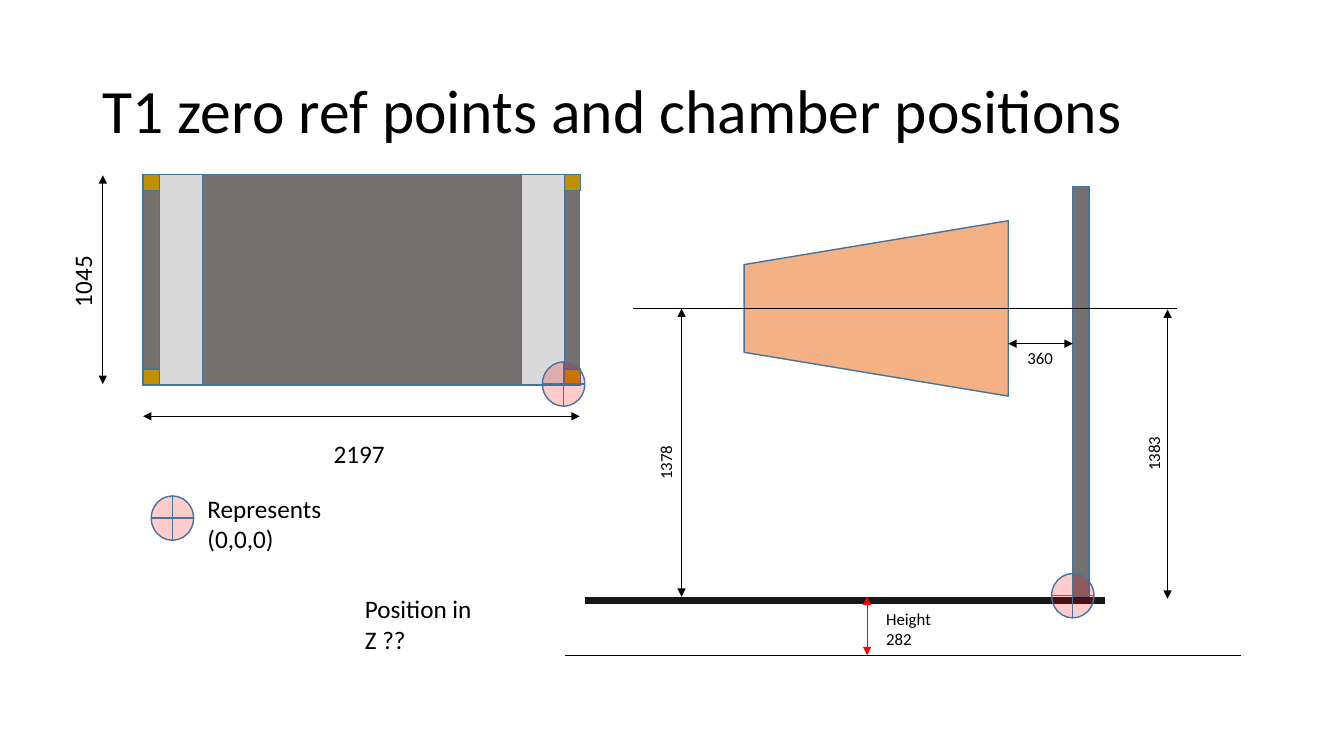
from lxml.etree import SubElement
from pptx import Presentation
from pptx.dml.color import RGBColor
from pptx.enum.shapes import MSO_CONNECTOR, MSO_SHAPE
from pptx.enum.text import MSO_ANCHOR, MSO_AUTO_SIZE, PP_ALIGN
from pptx.oxml.ns import qn
from pptx.util import Inches, Pt

BLACK = RGBColor(0x00, 0x00, 0x00)
COAL = RGBColor(0x18, 0x17, 0x17)
GREY = RGBColor(0x76, 0x71, 0x71)
PALE = RGBColor(0xD9, 0xD9, 0xD9)
GOLD = RGBColor(0xBF, 0x90, 0x00)
PEACH = RGBColor(0xF4, 0xB1, 0x83)
RED = RGBColor(0xFF, 0x00, 0x00)
BLUE = RGBColor(0x43, 0x73, 0x9E)


class Sketch:
    font = "Calibri"
    edge = BLUE

    def __init__(self, slide):
        self.slide = slide
        self.shapes = slide.shapes

    def style(self, frame, size):
        para = frame.paragraphs[0]
        para.alignment = PP_ALIGN.LEFT
        para.font.name = self.font
        para.font.size = Pt(size)
        para.font.color.rgb = BLACK
        return para

    def title(self, text, left, top, width, height):
        head = self.shapes.title
        head.left, head.top = Inches(left), Inches(top)
        head.width, head.height = Inches(width), Inches(height)
        frame = head.text_frame
        frame.text = text
        frame.vertical_anchor = MSO_ANCHOR.MIDDLE
        self.style(frame, 44).line_spacing = 0.9

    def shape(self, left, top, width, height, fill, kind=MSO_SHAPE.RECTANGLE, turn=0):
        item = self.shapes.add_shape(
            kind, Inches(left), Inches(top), Inches(width), Inches(height))
        item.rotation = turn
        item.shadow.inherit = False
        item.fill.solid()
        item.fill.fore_color.rgb = fill
        item.line.color.rgb = self.edge
        item.line.width = Pt(1)
        return item

    def zero(self, left, top):
        """Mark a (0,0,0) point with a see-through crossed circle."""
        mark = self.shape(left, top, 0.42, 0.44, RED, MSO_SHAPE.FLOWCHART_OR)
        color = mark.element.spPr.find(qn("a:solidFill"))[0]
        SubElement(color, qn("a:alpha"), val="20000")

    def line(self, x1, y1, x2, y2, color=BLACK, width=0.5, arrows=False):
        item = self.shapes.add_connector(
            MSO_CONNECTOR.STRAIGHT, Inches(x1), Inches(y1), Inches(x2), Inches(y2))
        item.line.color.rgb = color
        item.line.width = Pt(width)
        props = item.element.spPr
        if arrows:
            for end in ("a:headEnd", "a:tailEnd"):
                SubElement(props.find(qn("a:ln")), qn(end), type="triangle")
        SubElement(props, qn("a:effectLst"))

    def span(self, x1, y1, x2, y2, color=BLACK):
        """Draw a dimension line with an arrowhead at both ends."""
        self.line(x1, y1, x2, y2, color, arrows=True)

    def label(self, text, left, top, width, height, size=12, turn=0):
        box = self.shapes.add_textbox(
            Inches(left), Inches(top), Inches(width), Inches(height))
        box.rotation = turn
        frame = box.text_frame
        frame.word_wrap = True
        frame.auto_size = MSO_AUTO_SIZE.SHAPE_TO_FIT_TEXT
        frame.text = text
        self.style(frame, size)


def main():
    deck = Presentation()
    deck.slide_width, deck.slide_height = Inches(13.33), Inches(7.5)
    art = Sketch(deck.slides.add_slide(deck.slide_layouts[5]))
    art.title("T1 zero ref points and chamber positions", 0.92, 0.4, 11.5, 1.45)

    # Chamber seen from the front
    left, top, wide, high = 1.42, 1.73, 4.33, 2.09
    post, band = 0.16, 0.43
    right = 5.6
    art.shape(left, top, wide, high, GREY)
    for y in (top, top + high - post):
        for x in (right, left):
            art.shape(x, y, post, post, GOLD)
    for x in (right - band, left + post):
        art.shape(x, top, band, high, PALE)
    art.zero(5.38, 3.59)
    art.label("1045", 0.42, 2.55, 0.79, 0.4, 18, 270)
    art.label("2197", 3.21, 4.3, 0.74, 0.4, 18)
    art.span(left, 4.13, left + wide, 4.13)
    art.span(1.02, 3.81, 1.02, 1.74)

    # Side view: wall, floor, magnet and beam axis
    wall, floor, axis = 10.64, 5.96, 3.06
    art.shape(wall, 1.85, post, 4.07, GREY)
    art.line(5.8, floor, 10.96, floor, COAL, 5)
    art.shape(7.82, 1.75, 1.74, 2.62, PEACH, MSO_SHAPE.TRAPEZOID, 270)
    art.line(6.28, axis, 11.67, axis)
    art.span(11.58, 3.07, 11.58, 5.94)
    art.label("1383", 11.07, 4.25, 0.74, 0.3, turn=270)
    art.span(6.76, axis, 6.76, 5.92)
    art.label("1378", 6.23, 4.34, 0.74, 0.3, turn=270)
    art.zero(10.43, 5.69)
    art.span(10, 3.41, wall, 3.41)
    art.label("360", 10.09, 3.4, 0.49, 0.3)

    # Ground level and legend
    ground = 6.5
    art.line(right, ground, 12.31, ground)
    art.span(8.6, 5.92, 8.6, ground, RED)
    art.label("Height 282", 8.69, 5.99, 0.74, 0.5)
    art.zero(1.5, 4.92)
    art.label("Represents (0,0,0)", 1.96, 4.84, 1.4, 0.72, 18)
    art.label("Position in Z ??", 3.52, 5.84, 1.37, 0.71, 18)

    deck.save("out.pptx")


if __name__ == "__main__":
    main()
